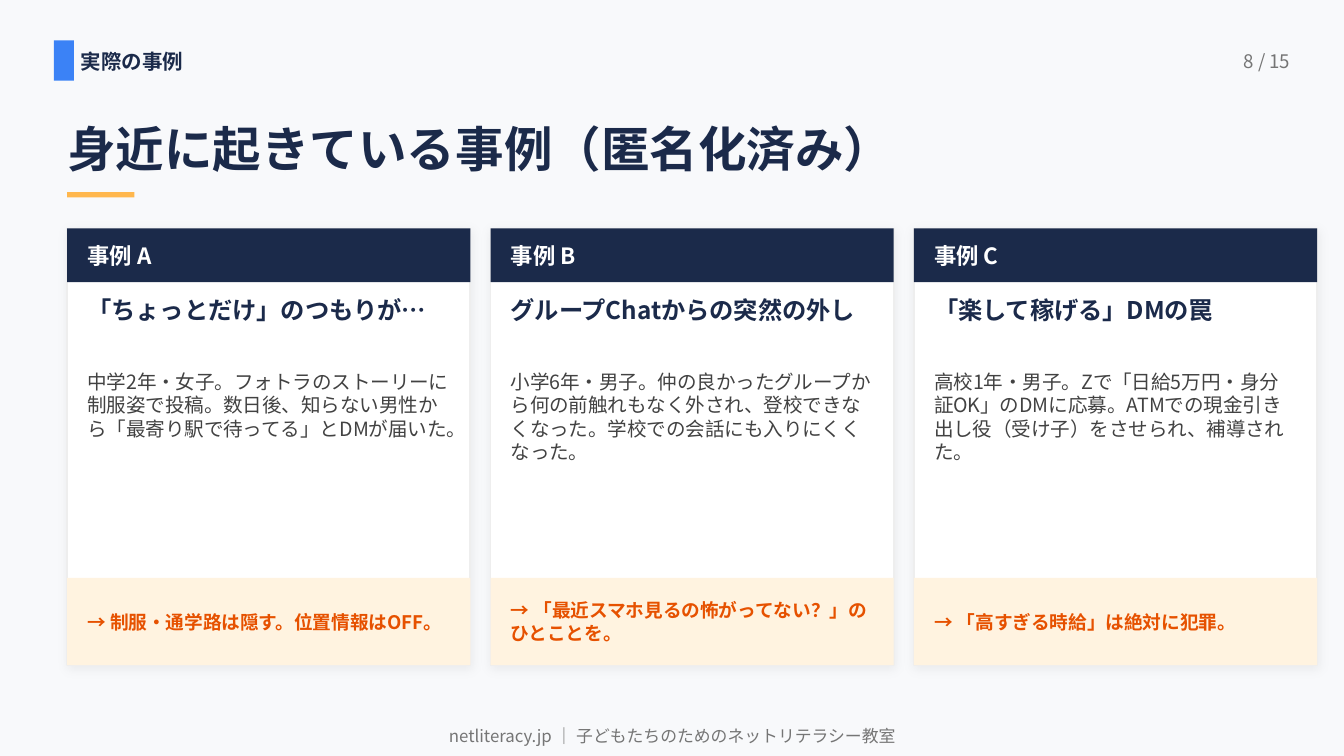
from dataclasses import dataclass

from lxml import etree
from pptx import Presentation
from pptx import util as u
from pptx.dml.color import RGBColor
from pptx.enum import shapes, text
from pptx.oxml import ns


@dataclass(frozen=True)
class Theme:
    """Colours, font and type sizes of the slide."""
    font: str = "Noto Sans CJK JP"
    background: str = "F8F9FB"
    navy: str = "1B2A4A"
    blue: str = "3B82F6"
    amber: str = "FFB74D"
    white: str = "FFFFFF"
    border: str = "EEEEEE"
    cream: str = "FFF3E0"
    orange: str = "E65100"
    body: str = "424242"
    muted: str = "757575"
    shadow: str = "000000"
    title_size: float = 26
    headline_size: float = 13
    label_size: float = 12
    section_size: float = 11
    story_size: float = 10.5
    small_size: float = 10
    footer_size: float = 9


THEME = Theme()
CASES = [
    ("事例 A", "「ちょっとだけ」のつもりが…",
     "中学2年・女子。フォトラのストーリーに制服姿で投稿。数日後、知らない男性から「最寄り駅で待ってる」とDMが届いた。",
     "→ 制服・通学路は隠す。位置情報はOFF。"),
    ("事例 B", "グループChatからの突然の外し",
     "小学6年・男子。仲の良かったグループから何の前触れもなく外され、登校できなくなった。学校での会話にも入りにくくなった。",
     "→ 「最近スマホ見るの怖がってない？」のひとことを。"),
    ("事例 C", "「楽して稼げる」DMの罠",
     "高校1年・男子。Zで「日給5万円・身分証OK」のDMに応募。ATMでの現金引き出し役（受け子）をさせられ、補導された。",
     "→ 「高すぎる時給」は絶対に犯罪。"),
]
CARD_LEFT, CARD_TOP, CARD_WIDTH, CARD_HEIGHT = 0.5, 1.7, 3, 3.25
CARD_GAP = PADDING = 0.15
HEADER_HEIGHT, LESSON_HEIGHT = 0.4, 0.65


def add_block(slide, left, top, width, height, color):
    """Add a plain filled rectangle without outline."""
    block = slide.shapes.add_shape(
        shapes.MSO_SHAPE.RECTANGLE, *map(u.Inches, (left, top, width, height)))
    block.shadow.inherit = False
    block.fill.solid()
    block.fill.fore_color.rgb = RGBColor.from_string(color)
    block.line.fill.background()
    return block


def add_label(slide, left, top, width, height, words, size, color, bold=False,
              align=text.PP_ALIGN.LEFT, anchor=text.MSO_ANCHOR.MIDDLE, after=0):
    """Add a one-paragraph text box without margins."""
    frame = slide.shapes.add_textbox(
        *map(u.Inches, (left, top, width, height))).text_frame
    frame.word_wrap = True
    frame.vertical_anchor = anchor
    frame.margin_left = frame.margin_right = 0
    frame.margin_top = frame.margin_bottom = 0
    paragraph = frame.paragraphs[0]
    paragraph.text = words
    paragraph.alignment = align
    if after:
        paragraph.space_after = u.Pt(after)
    font = paragraph.font
    font.name, font.size, font.bold = THEME.font, u.Pt(size), bold
    font.color.rgb = RGBColor.from_string(color)
    defaults = paragraph._p.pPr.find(ns.qn("a:defRPr"))
    etree.SubElement(defaults, ns.qn("a:ea"), typeface=THEME.font)


def add_soft_shadow(panel):
    """Give a panel a faint shadow straight below it."""
    effects = panel._element.spPr.find(ns.qn("a:effectLst"))
    shadow = etree.SubElement(
        effects, ns.qn("a:outerShdw"), blurRad=str(u.Pt(6)),
        dist=str(u.Pt(1)), dir="5400000", algn="bl", rotWithShape="0")
    color = etree.SubElement(shadow, ns.qn("a:srgbClr"), val=THEME.shadow)
    etree.SubElement(color, ns.qn("a:alpha"), val="5000")


def add_case(slide, left, label, headline, story, lesson):
    """Add one case card with header, story and lesson strip."""
    panel = add_block(slide, left, CARD_TOP, CARD_WIDTH, CARD_HEIGHT, THEME.white)
    panel.line.color.rgb = RGBColor.from_string(THEME.border)
    panel.line.width = u.Pt(1)
    add_soft_shadow(panel)

    inner_left, inner_width = left + PADDING, CARD_WIDTH - 2 * PADDING
    lesson_top = CARD_TOP + CARD_HEIGHT - LESSON_HEIGHT
    top_anchor = text.MSO_ANCHOR.TOP
    add_block(slide, left, CARD_TOP, CARD_WIDTH, HEADER_HEIGHT, THEME.navy)
    add_label(slide, inner_left, CARD_TOP, inner_width, HEADER_HEIGHT, label,
              THEME.label_size, THEME.white, bold=True)
    add_label(slide, inner_left, 2.2, inner_width, 0.5, headline,
              THEME.headline_size, THEME.navy, bold=True, anchor=top_anchor)
    add_label(slide, inner_left, 2.75, inner_width, 1.55, story,
              THEME.story_size, THEME.body, anchor=top_anchor, after=4)
    add_block(slide, left, lesson_top, CARD_WIDTH, LESSON_HEIGHT, THEME.cream)
    add_label(slide, inner_left, lesson_top, inner_width, LESSON_HEIGHT, lesson,
              THEME.small_size, THEME.orange, bold=True)


def add_heading(slide):
    """Add the section marker, page number, title and underline."""
    add_block(slide, 0.4, 0.3, 0.15, 0.3, THEME.blue)
    add_label(slide, 0.6, 0.28, 6, 0.35, "実際の事例",
              THEME.section_size, THEME.navy, bold=True)
    add_label(slide, 8.4, 0.28, 1.2, 0.35, "8 / 15",
              THEME.small_size, THEME.muted, align=text.PP_ALIGN.RIGHT)
    add_label(slide, 0.5, 0.75, 9, 0.7, "身近に起きている事例（匿名化済み）",
              THEME.title_size, THEME.navy, bold=True)
    add_block(slide, 0.5, 1.43, 0.5, 0.04, THEME.amber)


def main():
    """Build the case slide and save it."""
    deck = Presentation()
    deck.slide_width = u.Inches(10)
    deck.slide_height = u.Inches(10 * 9 / 16)
    slide = deck.slides.add_slide(deck.slide_layouts[6])
    slide.background.fill.solid()
    slide.background.fill.fore_color.rgb = RGBColor.from_string(THEME.background)

    add_heading(slide)
    for column, case in enumerate(CASES):
        add_case(slide, CARD_LEFT + column * (CARD_WIDTH + CARD_GAP), *case)
    add_label(slide, 0.4, 5.35, 9.2, 0.25,
              "netliteracy.jp ｜ 子どもたちのためのネットリテラシー教室",
              THEME.footer_size, THEME.muted, align=text.PP_ALIGN.CENTER)
    deck.save("out.pptx")


if __name__ == "__main__":
    main()
